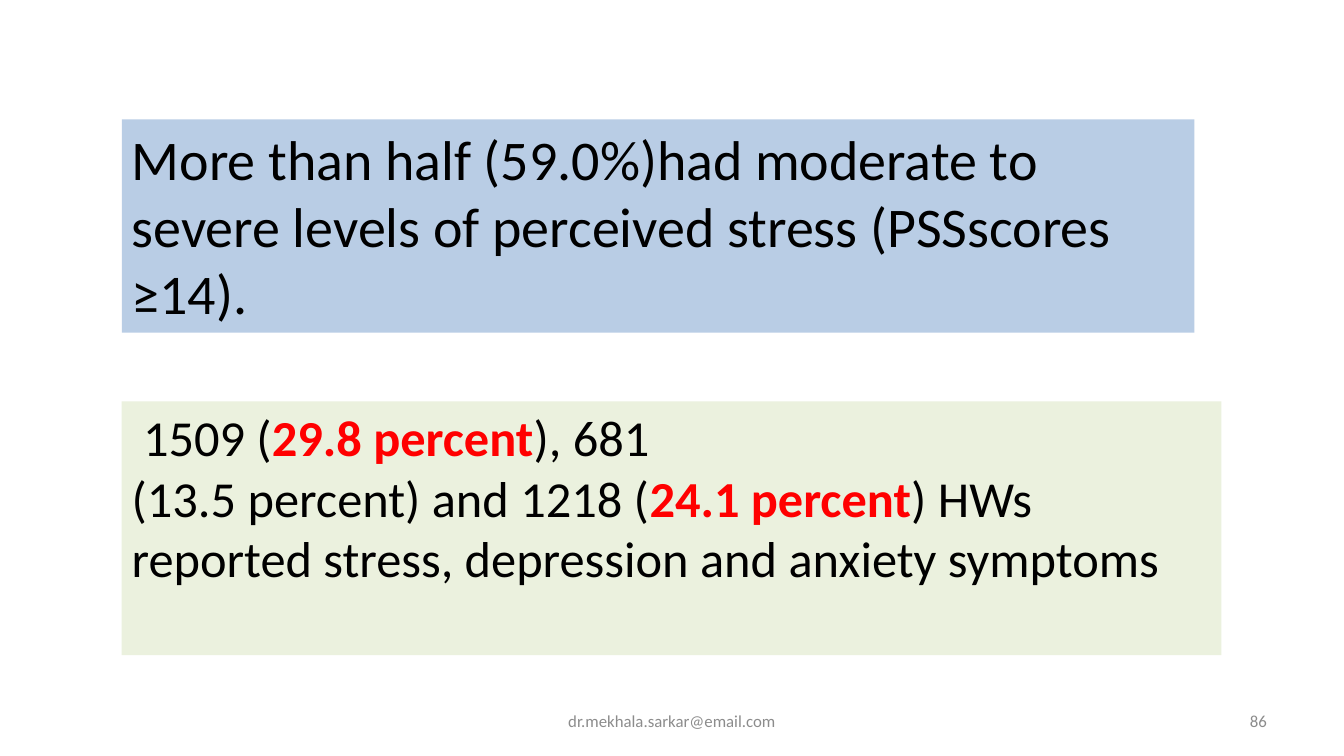
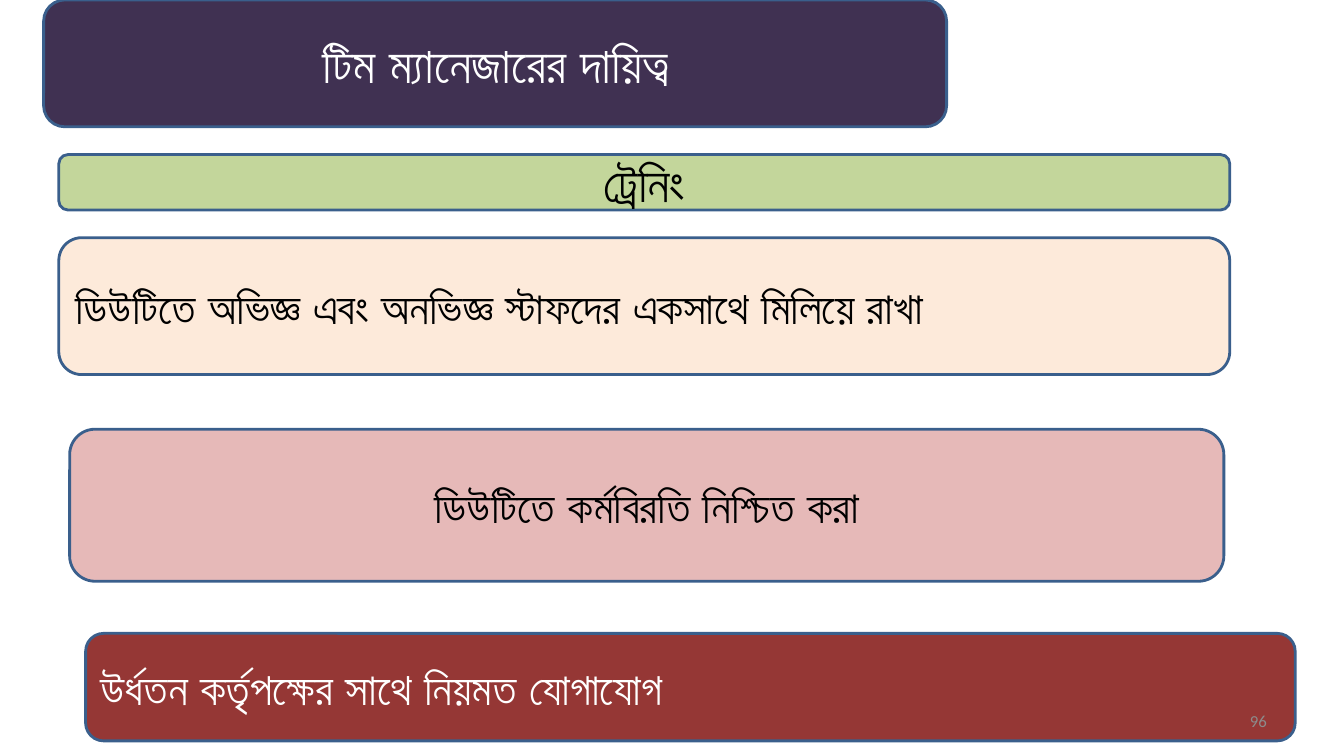
from dataclasses import dataclass
from pptx import Presentation
from pptx.dml.color import RGBColor
from pptx.enum.shapes import MSO_SHAPE
from pptx.enum.text import MSO_ANCHOR, PP_ALIGN
from pptx.util import Inches, Pt

COLS, ROWS = 160, 90


@dataclass(frozen=True)
class Theme:
    face: str = "Calibri"
    ink: str = "000000"
    white: str = "FFFFFF"
    alert: str = "FF0000"
    edge: str = "3A5F8C"
    muted: str = "8C8C8C"
    blue: str = "B9CDE5"
    pale: str = "EBF1DE"
    plum: str = "403152"
    green: str = "C3D69B"
    peach: str = "FDEADA"
    rose: str = "E6B9B8"
    brick: str = "953735"
    huge: int = 40
    large: int = 36
    body: int = 32
    small: int = 12
    stroke: int = 2


class Deck:
    def __init__(self, theme):
        self.theme = theme
        self.show = Presentation()
        self.show.slide_width = Inches(13.33)
        self.show.slide_height = Inches(7.5)
        self.slide = None

    def start(self):
        self.slide = self.show.slides.add_slide(self.show.slide_layouts[6])

    def footer(self, number, mail=None):
        if mail:
            self.note((54.7, 83.4, 50.6, 4.8), mail, PP_ALIGN.CENTER)
        self.note((114.7, 83.4, 37.3, 4.8), str(number), PP_ALIGN.RIGHT)

    def place(self, spot):
        """Turn columns and rows into slide lengths."""
        wide = self.show.slide_width / COLS
        high = self.show.slide_height / ROWS
        return [int(n * unit) for n, unit in zip(spot, (wide, high) * 2)]

    def label(self, shape, paras, size, ink, align=PP_ALIGN.LEFT,
              anchor=MSO_ANCHOR.MIDDLE, bold=False):
        """Fill a shape with paragraphs, each a list of (text, format) runs."""
        frame = shape.text_frame
        frame.word_wrap = True
        frame.vertical_anchor = anchor
        for i, runs in enumerate(paras):
            para = frame.add_paragraph() if i else frame.paragraphs[0]
            para.alignment = align
            for text, extra in runs:
                run = para.add_run()
                run.text = text
                look = {"name": self.theme.face, "size": Pt(size),
                        "bold": bold, "ink": ink, **extra}
                run.font.color.rgb = RGBColor.from_string(look.pop("ink"))
                for key, value in look.items():
                    setattr(run.font, key, value)

    def block(self, kind, spot, fill, edge=None):
        shape = self.slide.shapes.add_shape(kind, *self.place(spot))
        shape.shadow.inherit = False
        shape.fill.solid()
        shape.fill.fore_color.rgb = RGBColor.from_string(fill)
        if edge:
            shape.line.color.rgb = RGBColor.from_string(edge)
            shape.line.width = Pt(self.theme.stroke)
        else:
            shape.line.fill.background()
        return shape

    def panel(self, spot, fill, paras, size):
        shape = self.block(MSO_SHAPE.RECTANGLE, spot, fill)
        self.label(shape, paras, size, self.theme.ink, anchor=MSO_ANCHOR.TOP)

    def card(self, spot, fill, text, size, ink, align):
        shape = self.block(MSO_SHAPE.ROUNDED_RECTANGLE, spot, fill,
                           self.theme.edge)
        self.label(shape, [[(text, {})]], size, ink, align, bold=True)

    def note(self, spot, text, align):
        box = self.slide.shapes.add_textbox(*self.place(spot))
        self.label(box, [[(text, {})]], self.theme.small, self.theme.muted,
                   align)


def stress(deck):
    t = deck.theme
    hot = {"ink": t.alert, "bold": True}
    deck.start()
    deck.panel((14.5, 14.2, 127.7, 25.4), t.blue, [
        [("More than half (59.0%)had moderate to severe levels of "
          "perceived stress (PSSscores ≥14).", {})],
    ], t.huge)
    deck.panel((14.5, 47.8, 130.9, 30.2), t.pale, [
        [(" 1509 (", {}), ("29.8 percent", hot), ("), 681", {})],
        [("(13.5 percent) and 1218 (", {}), ("24.1 percent", hot),
         (") HWs reported stress, depression and anxiety symptoms", {})],
    ], t.large)
    deck.footer(86, "dr.mekhala.sarkar@email.com")


def duties(deck):
    t = deck.theme
    left, mid = PP_ALIGN.LEFT, PP_ALIGN.CENTER
    cards = [
        ((5.2, 0, 107.5, 15.1), t.plum, "টিম ম্যানেজারের দায়িত্ব",
         t.large, t.white, mid),
        ((7, 18.4, 139.4, 6.6), t.green, "ট্রেনিং", t.large, t.ink, mid),
        ((7, 28.3, 139.4, 16.3), t.peach,
         "ডিউটিতে অভিজ্ঞ এবং অনভিজ্ঞ স্টাফদের একসাথে মিলিয়ে রাখা",
         t.body, t.ink, left),
        ((8.3, 51.1, 137.4, 18.1), t.rose, "ডিউটিতে কর্মবিরতি নিশ্চিত করা",
         t.body, t.ink, mid),
        ((10.2, 75.4, 144, 12.8), t.brick,
         "উর্ধতন কর্তৃপক্ষের সাথে নিয়মত যোগাযোগ", t.body, t.white, left),
    ]
    deck.start()
    for card in cards:
        deck.card(*card)
    deck.footer(96)


def main():
    deck = Deck(Theme())
    stress(deck)
    duties(deck)
    deck.show.save("out.pptx")


if __name__ == "__main__":
    main()
